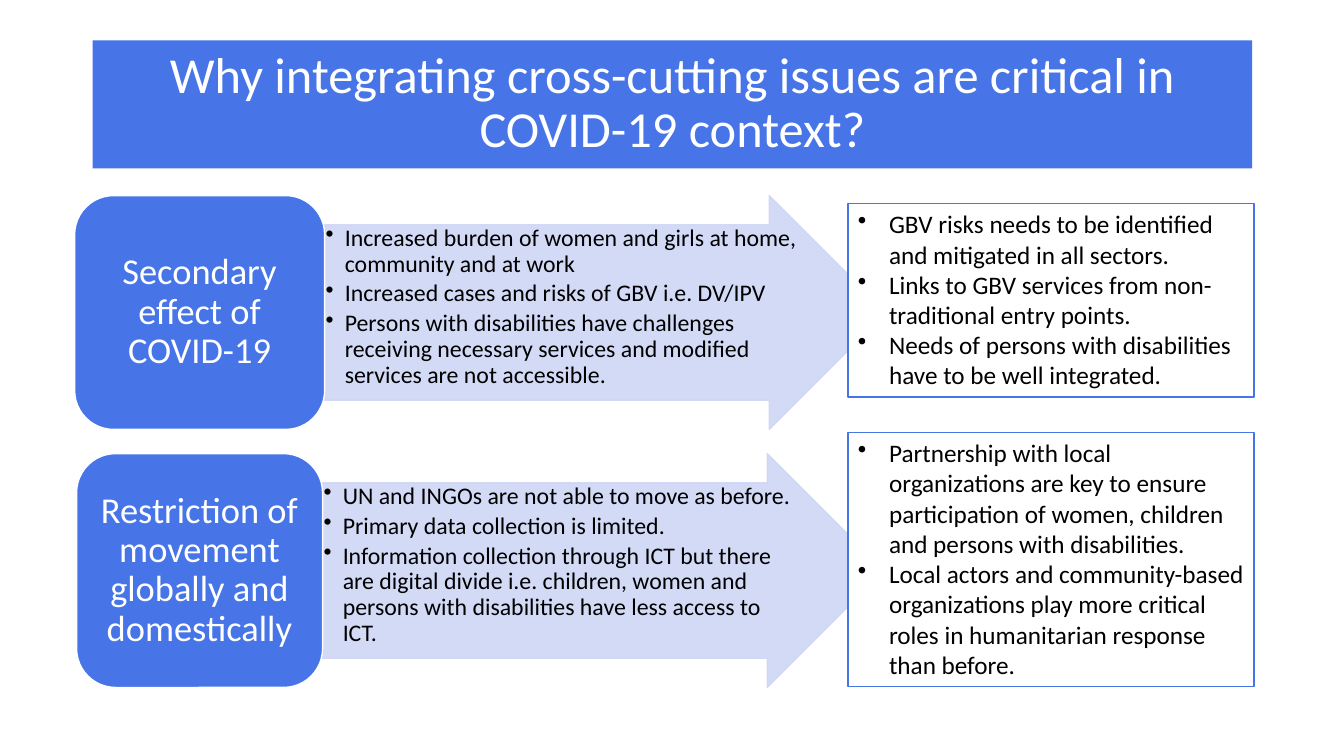
"""Build the slide on cross-cutting issues in the COVID-19 context."""
from dataclasses import dataclass
from lxml.etree import SubElement
from pptx import Presentation
from pptx.dml.color import RGBColor as RGB
from pptx.enum.shapes import MSO_SHAPE as Kind
from pptx.enum.text import MSO_ANCHOR as Anchor, PP_ALIGN as Align
from pptx.oxml.ns import qn
from pptx.shapes.autoshape import Shape
from pptx.slide import Slide
from pptx.util import Inches, Pt

HUES = {"blue": "4775E7", "pale": "CFD6F6", "white": "FFFFFF", "black": "000000"}
TOP, STEP, HIGH = 1.94, 2.56, 2.32
ARROW = 5.57


@dataclass(frozen=True)
class Box:
    left: float
    top: float
    width: float
    height: float


@dataclass(frozen=True)
class Style:
    size: int
    hue: str
    align: Align = Align.LEFT
    line: float = 1.0
    after: float = 0
    indent: float = 0


@dataclass(frozen=True)
class Row:
    label: str
    left: float
    width: float
    facts: list[str]
    needs: list[str]
    card: Box


HEAD = Style(36, "white", Align.CENTER, 0.9)
LABEL = Style(26, "white", Align.CENTER, 0.9)
FACT = Style(17, "black", line=0.9, after=3, indent=0.19)
NEED = Style(18, "black", indent=0.31)

ROWS = [
    Row("Secondary effect of COVID-19", 0.74, 2.48,
        ["Increased burden of women and girls at home, community and at work",
         "Increased cases and risks of GBV i.e. DV/IPV",
         "Persons with disabilities have challenges receiving necessary services "
         "and modified services are not accessible. "],
        ["GBV risks needs to be identified and mitigated in all sectors.",
         "Links to GBV services from non-traditional entry points.",
         "Needs of persons with disabilities have to be well integrated."],
        Box(8.41, 2.02, 4.03, 1.92)),
    Row("Restriction of movement globally and domestically", 0.76, 2.44,
        ["UN and INGOs are not able to move as before. ",
         "Primary data collection is limited. ",
         "Information collection through ICT but there are digital divide i.e. "
         "children, women and persons with disabilities have less access to ICT. "],
        ["Partnership with local organizations are key to ensure participation of "
         "women, children and persons with disabilities.",
         "Local actors and community-based organizations play more critical roles in "
         "humanitarian response than before."],
        Box(8.41, 4.29, 4.03, 2.52)),
]


def place(box: Box) -> list[int]:
    return [Inches(n) for n in (box.left, box.top, box.width, box.height)]


def draw(slide: Slide, kind: Kind, box: Box, fill: str, edge: str = "") -> Shape:
    shape = slide.shapes.add_shape(kind, *place(box))
    shape.shadow.inherit = False
    shape.fill.solid()
    shape.fill.fore_color.rgb = RGB.from_string(HUES[fill])
    if edge:
        shape.line.color.rgb = RGB.from_string(HUES[edge])
        shape.line.width = Pt(1)
    else:
        shape.line.fill.background()
    return shape


def fade(shape: Shape, share: int) -> None:
    for hue in shape.element.spPr.iter(qn("a:srgbClr")):
        SubElement(hue, qn("a:alpha"), val=str(share * 1000))


def write(shape: Shape, texts: list[str], style: Style, anchor: Anchor,
          side: float = 0.1, edge: float = 0.05) -> None:
    frame = shape.text_frame
    frame.word_wrap = True
    frame.vertical_anchor = anchor
    frame.margin_left = frame.margin_right = Inches(side)
    frame.margin_top = frame.margin_bottom = Inches(edge)
    for i, text in enumerate(texts):
        para = frame.add_paragraph() if i else frame.paragraphs[0]
        para.text = text
        para.alignment = style.align
        para.line_spacing = style.line
        para.space_after = Pt(style.after)
        para.font.name = "Calibri"
        para.font.size = Pt(style.size)
        para.font.color.rgb = RGB.from_string(HUES[style.hue])
        if style.indent:
            props = para._p.get_or_add_pPr()
            props.set("marL", str(Inches(style.indent)))
            props.set("indent", str(-Inches(style.indent)))
            mark = SubElement(props, qn("a:buChar"), char="•")
            props.find(qn("a:defRPr")).addprevious(mark)


def band(slide: Slide, row: Row, top: float) -> None:
    start = row.left + row.width
    arrow = draw(slide, Kind.RIGHT_ARROW, Box(start, top, ARROW, HIGH), "pale", "pale")
    arrow.adjustments[0] = 0.75
    arrow.adjustments[1] = 0.5
    fade(arrow, 90)
    body = Box(start, top + HIGH / 8, ARROW - 3 * HIGH / 8, HIGH * 0.75)
    facts = slide.shapes.add_textbox(*place(body))
    write(facts, row.facts, FACT, Anchor.TOP, 0.01, 0.01)
    label = draw(slide, Kind.ROUNDED_RECTANGLE,
                 Box(row.left, top, row.width, HIGH), "blue", "white")
    write(label, [row.label], LABEL, Anchor.MIDDLE, 0.11)
    card = draw(slide, Kind.RECTANGLE, row.card, "white", "blue")
    write(card, row.needs, NEED, Anchor.TOP)


def main() -> None:
    deck = Presentation()
    deck.slide_width, deck.slide_height = Inches(13.33), Inches(7.5)
    slide = deck.slides.add_slide(deck.slide_layouts[6])
    title = draw(slide, Kind.RECTANGLE, Box(0.92, 0.4, 11.5, 1.27), "blue")
    write(title, ["Why integrating cross-cutting issues are critical in COVID-19 context?"],
          HEAD, Anchor.MIDDLE)
    for i, row in enumerate(ROWS):
        band(slide, row, TOP + i * STEP)
    deck.save("out.pptx")


if __name__ == "__main__":
    main()
